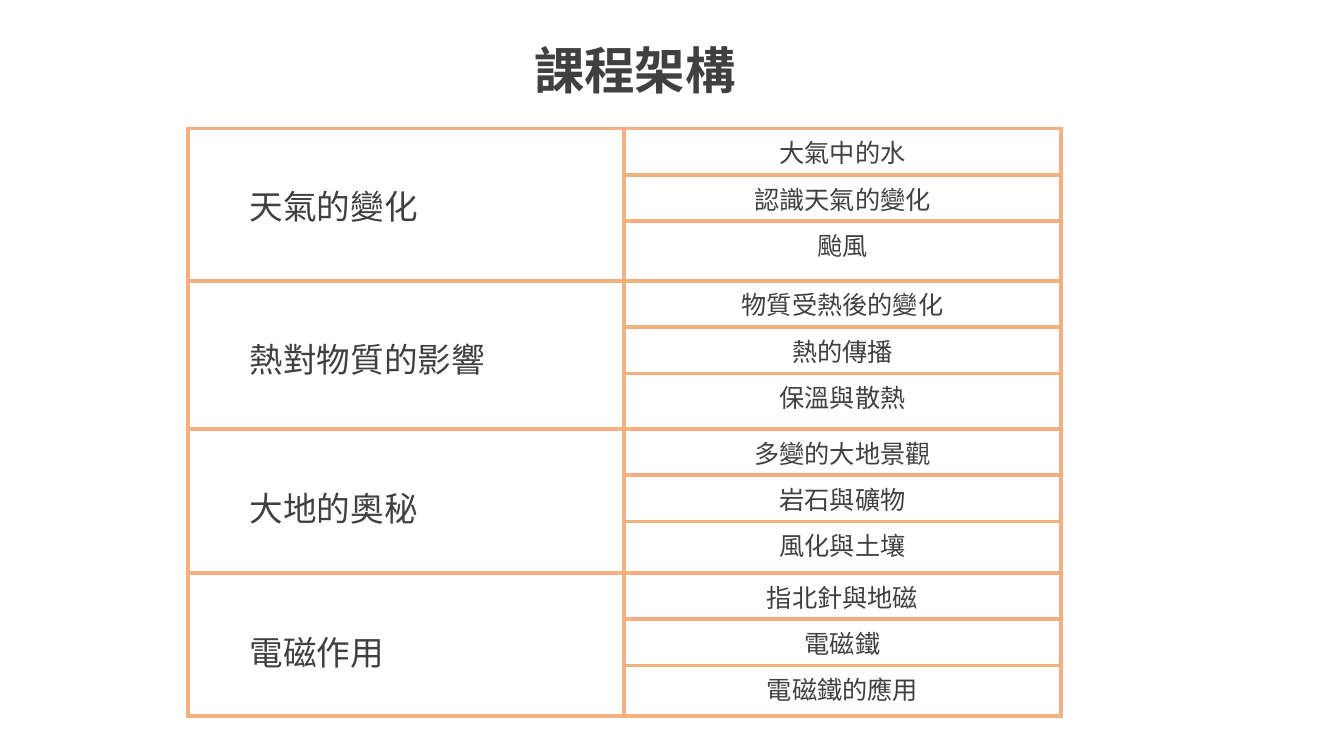
from lxml.etree import SubElement
from pptx import Presentation
from pptx.dml.color import RGBColor
from pptx.enum.text import MSO_ANCHOR as Anchor, PP_ALIGN as Align
from pptx.oxml.ns import qn
from pptx.util import Inches, Pt

WHITE = RGBColor(0xFF, 0xFF, 0xFF)
INK = RGBColor(0x40, 0x40, 0x40)
ORANGE = RGBColor(0xF4, 0xB0, 0x81)
WIDTH, HEIGHT = 13.33, 7.5
ROW = 0.46

# Each unit: name, height of its last row, extra top margin, lessons
UNITS = [
    ("天氣的變化", 0.59, 0, ["大氣中的水", "認識天氣的變化", "颱風"]),
    ("熱對物質的影響", 0.55, 0.07, ["物質受熱後的變化", "熱的傳播", "保溫與散熱"]),
    ("大地的奧秘", 0.51, 0.11, ["多變的大地景觀", "岩石與礦物", "風化與土壤"]),
    ("電磁作用", 0.5, 0.13, ["指北針與地磁", "電磁鐵", "電磁鐵的應用"]),
]


class Deck:
    """Slide style; places are shares of the slide's size."""

    font = "Noto Sans CJK SC"

    def __init__(self, prs):
        self.s = prs.slides.add_slide(prs.slide_layouts[6])

    def box(self, x, y, w, h):
        return [Inches(v) for v in (x * WIDTH, y * HEIGHT, w * WIDTH, h * HEIGHT)]

    def set_text(self, tf, text, size, bold=False, align=Align.LEFT):
        tf.text = text
        p = tf.paragraphs[0]
        p.alignment = align
        r = p.runs[0]
        r.font.size, r.font.bold, r.font.name = Pt(size), bold, self.font
        r.font.color.rgb = INK
        SubElement(r.font._element, qn("a:ea"), typeface=self.font)
        return p

    def title(self, text, *place):
        tf = self.s.shapes.add_textbox(*self.box(*place)).text_frame
        tf.word_wrap = True
        tf.vertical_anchor = Anchor.BOTTOM
        self.set_text(tf, text, 36, bold=True).line_spacing = 0.9

    def table(self, place, columns, rows):
        shape = self.s.shapes.add_table(len(rows), len(columns), *self.box(*place))
        table = shape.table
        for column, width in zip(table.columns, columns):
            column.width = Inches(width)
        for row, height in zip(table.rows, rows):
            row.height = Inches(height)
        for cell in table.iter_cells():
            self.outline(cell)
            cell.fill.solid()
            cell.fill.fore_color.rgb = WHITE
        return table

    def outline(self, cell):
        tc_pr = cell._tc.get_or_add_tcPr()
        for side in ("lnL", "lnR", "lnT", "lnB"):
            ln = SubElement(tc_pr, qn("a:" + side), w=str(Pt(3)))
            fill = SubElement(ln, qn("a:solidFill"))
            SubElement(fill, qn("a:srgbClr"), val=str(ORANGE))

    def unit(self, table, top, name, extra, lessons):
        cell = table.cell(top, 0)
        cell.merge(table.cell(top + len(lessons) - 1, 0))
        cell.vertical_anchor = Anchor.MIDDLE
        cell.margin_left = Inches(0.61)
        cell.margin_top = Inches(0.05 + extra)
        self.set_text(cell.text_frame, name, 24)
        for i, lesson in enumerate(lessons, top):
            self.set_text(table.cell(i, 1).text_frame, lesson, 18, align=Align.CENTER)


def main():
    prs = Presentation()
    prs.slide_width, prs.slide_height = Inches(WIDTH), Inches(HEIGHT)
    deck = Deck(prs)

    # Heading
    deck.title("課程架構", 0.39, 0.05, 0.17, 0.09)

    # Course table
    rows = [h for _, last, _, _ in UNITS for h in (ROW, ROW, last)]
    place = (0.14, 0.17, 0.65, sum(rows) / HEIGHT)
    table = deck.table(place, (4.32, 4.34), rows)
    top = 0
    for name, _, extra, lessons in UNITS:
        deck.unit(table, top, name, extra, lessons)
        top += len(lessons)

    prs.save("out.pptx")


if __name__ == "__main__":
    main()
